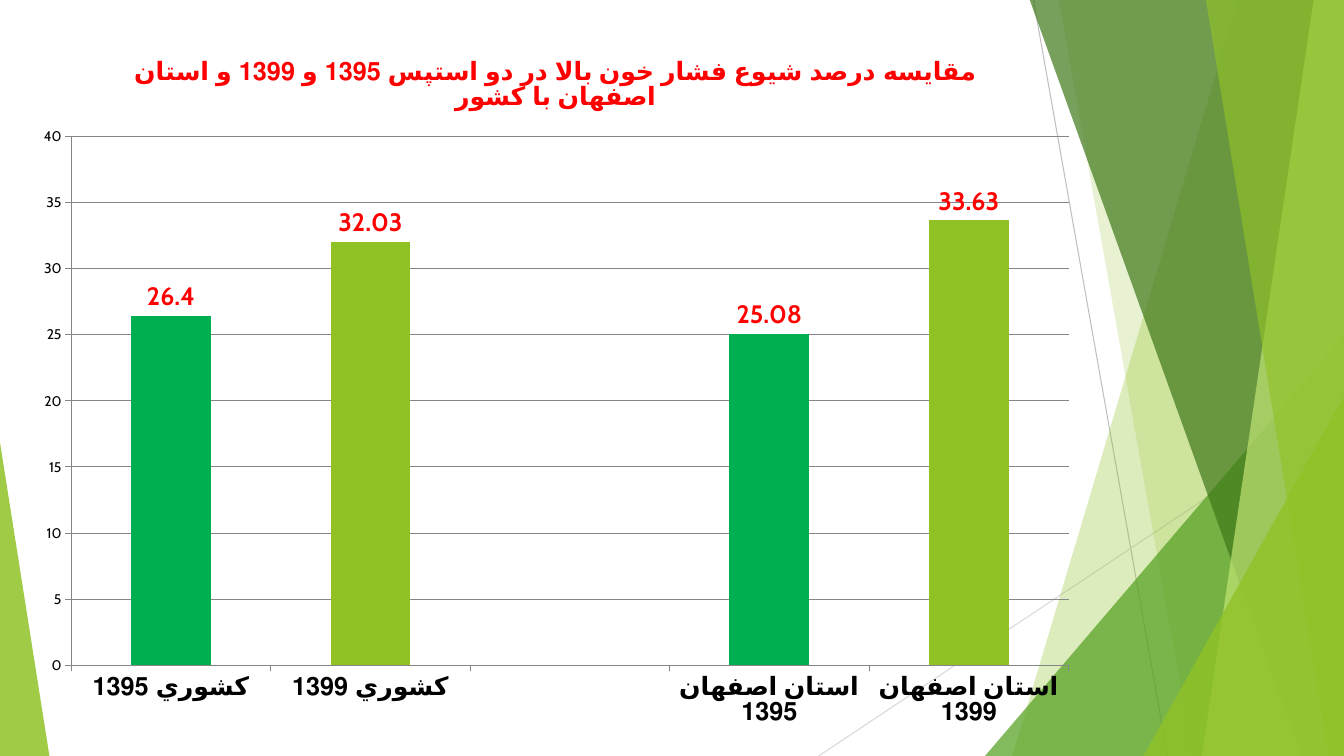
from lxml.etree import SubElement as Sub
from pptx import Presentation
from pptx.chart.data import CategoryChartData as Data
from pptx.dml.color import RGBColor as RGB
from pptx.enum.chart import XL_CHART_TYPE as Kind, XL_LABEL_POSITION as Spot, XL_TICK_MARK as Tick
from pptx.enum.shapes import MSO_CONNECTOR as Wire, MSO_SHAPE as Form
from pptx.oxml.ns import qn
from pptx.util import Inches, Pt

LIME = RGB(0x90, 0xC2, 0x26)
LEAF = RGB(0x54, 0xA0, 0x21)
MOSS = RGB(0x3F, 0x78, 0x19)
PALE = RGB(0xC0, 0xE4, 0x74)
GREEN = RGB(0x00, 0xB0, 0x50)
RED = RGB(0xFF, 0x00, 0x00)
BLACK = RGB(0x00, 0x00, 0x00)
GRAY = RGB(0x86, 0x86, 0x86)
SILVER = RGB(0xBF, 0xBF, 0xBF)
MIST = RGB(0xD9, 0xD9, 0xD9)
WIDE, HIGH, TOP = 13.33, 7.5, -0.01


class Deck:
    face = "Cabin"

    def __init__(self):
        self.show = Presentation()
        self.show.slide_width = Inches(WIDE)
        self.show.slide_height = Inches(HIGH)
        self.slide = self.show.slides.add_slide(self.show.slide_layouts[6])
        self.shapes = self.slide.shapes

    def line(self, start, end, color):
        wire = self.shapes.add_connector(Wire.STRAIGHT, *map(Inches, start + end))
        wire.line.color.rgb = color
        wire.line.width = Pt(0.75)
        Sub(wire._element.spPr, qn("a:effectLst"))

    def paint(self, shape, color, alpha):
        shape.shadow.inherit = False
        shape.fill.solid()
        shape.fill.fore_color.rgb = color
        shape.line.fill.background()
        tint = shape._element.spPr.find(".//" + qn("a:srgbClr"))
        Sub(tint, qn("a:alpha")).set("val", str(alpha * 1000))

    def band(self, head, foot, color, alpha):
        pen = self.shapes.build_freeform(Inches(head), Inches(TOP))
        edge = [(WIDE, TOP), (WIDE, HIGH), (foot, HIGH)]
        pen.add_line_segments([(Inches(x), Inches(y)) for x, y in edge])
        self.paint(pen.convert_to_shape(), color, alpha)

    def wedge(self, left, top, width, tip, color, alpha):
        box = map(Inches, (left, top, width, HIGH - top))
        shape = self.shapes.add_shape(Form.ISOSCELES_TRIANGLE, *box)
        shape.adjustments[0] = tip
        self.paint(shape, color, alpha)

    def type(self, font, size, color, bold):
        font.name = self.face
        font.size = Pt(size)
        font.color.rgb = color
        font.bold = bold

    def chart(self, box, title, names, values, marked):
        data = Data()
        data.categories = names
        data.add_series("Series 1", values)
        frame = self.shapes.add_chart(Kind.COLUMN_CLUSTERED, *map(Inches, box), data)
        chart = frame.chart
        self.type(chart.font, 10, BLACK, False)
        chart.has_legend = False
        chart.has_title = True
        run = chart.chart_title.text_frame.paragraphs[0].add_run()
        run.text = title
        self.type(run.font, 18, RED, True)
        chart.chart_title.include_in_layout = False
        self.axes(chart)
        self.bars(chart.plots[0], marked)
        self.place(chart, x=0.046, y=0.146, w=0.935, h=0.75)

    def axes(self, chart):
        for axis in (chart.category_axis, chart.value_axis):
            axis.major_tick_mark = Tick.OUTSIDE
            axis.minor_tick_mark = Tick.NONE
            axis.format.line.color.rgb = GRAY
            axis.format.line.width = Pt(0.75)
        self.type(chart.category_axis.tick_labels.font, 18, BLACK, True)
        scale = chart.value_axis
        scale.minimum_scale, scale.maximum_scale, scale.major_unit = 0, 40, 5
        scale.has_major_gridlines = True
        scale.major_gridlines.format.line.color.rgb = GRAY
        scale.major_gridlines.format.line.width = Pt(0.75)

    def bars(self, plot, marked):
        plot.gap_width = 150
        plot.vary_by_categories = False
        bars = plot.series[0]
        bars.invert_if_negative = False
        bars.format.fill.solid()
        bars.format.fill.fore_color.rgb = LIME
        for index in marked:
            fill = bars.points[index].format.fill
            fill.solid()
            fill.fore_color.rgb = GREEN
        labels = bars.data_labels
        labels.show_value = True
        labels.position = Spot.OUTSIDE_END
        self.type(labels.font, 18, RED, True)

    def place(self, chart, **part):
        area = chart._chartSpace.find(".//" + qn("c:plotArea"))
        layout = area.find(qn("c:layout"))
        if layout is None:
            layout = Sub(area, qn("c:layout"))
            area.insert(0, layout)
        manual = Sub(layout, qn("c:manualLayout"))
        rules = {"layoutTarget": "inner", "xMode": "edge", "yMode": "edge", **part}
        for name, value in rules.items():
            Sub(manual, qn("c:" + name)).set("val", str(value))


def main():
    deck = Deck()
    deck.line((10.25, 0), (11.58, HIGH), SILVER)
    deck.line((WIDE, 4.03), (8.12, HIGH), MIST)
    deck.band(12.28, 10.04, LIME, 30)
    deck.band(10.5, 11.83, LIME, 20)
    deck.wedge(9.77, 3.33, 3.56, 1, LEAF, 72)
    deck.band(10.21, 12.91, MOSS, 70)
    deck.band(13.03, 11.92, PALE, 70)
    deck.band(11.96, 13.18, LIME, 65)
    deck.wedge(11.34, 3.93, 1.99, 1, LIME, 80)
    deck.wedge(0, 4.39, 0.49, 0, LIME, 85)
    deck.chart(
        (0.22, 0.33, 10.58, 7),
        "مقايسه درصد شیوع فشار خون بالا در دو استپس 1395 و 1399 و استان اصفهان با کشور",
        ["کشوري 1395", "کشوري 1399", "", "استان اصفهان 1395", "استان اصفهان 1399"],
        [26.4, 32.03, None, 25.08, 33.63],
        marked=(0, 3),
    )
    deck.show.save("out.pptx")


if __name__ == "__main__":
    main()
